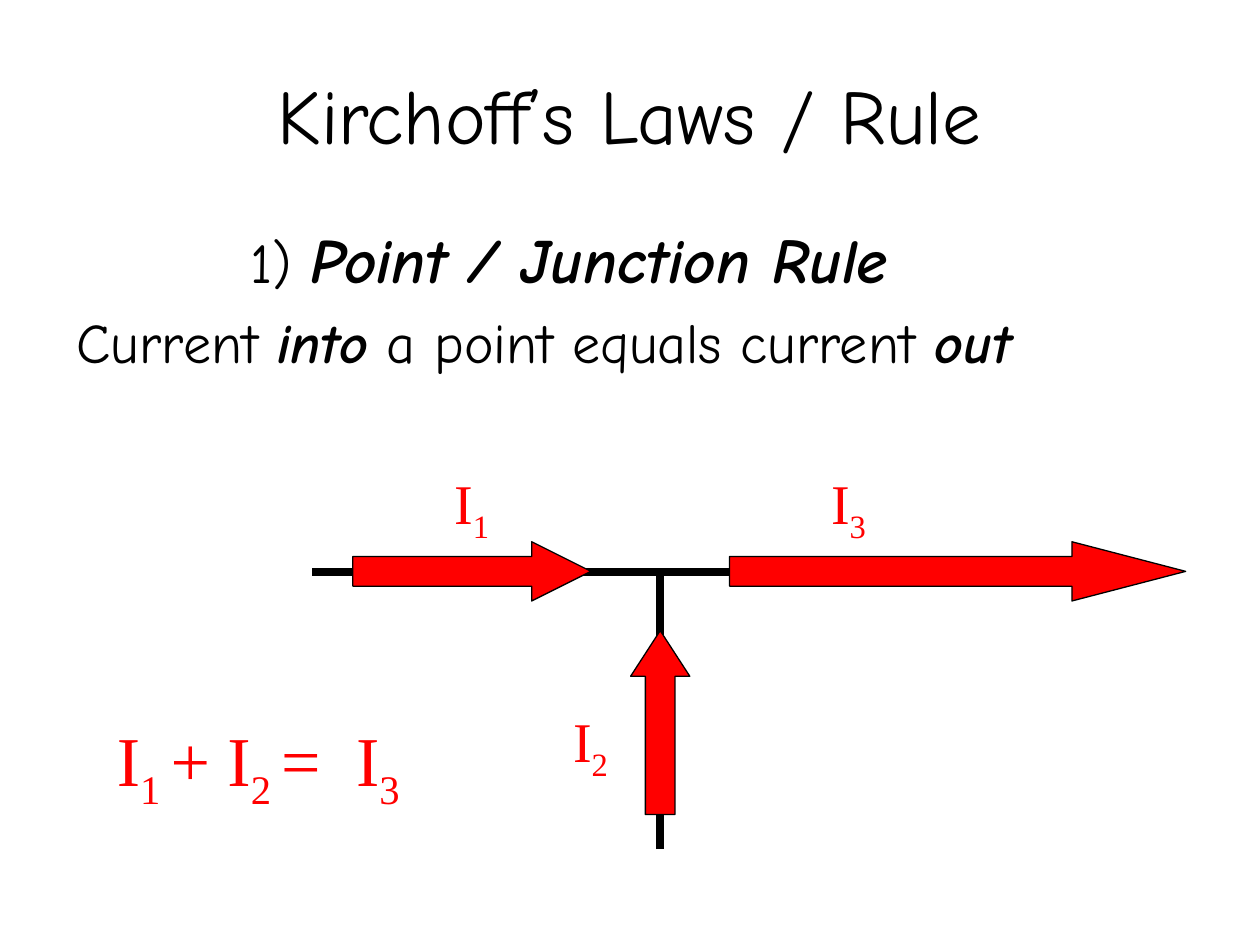
"""Build a slide on the junction rule with a diagram of three currents."""
from dataclasses import dataclass

from pptx import Presentation
from pptx.dml.color import RGBColor
from pptx.enum.shapes import MSO_CONNECTOR as Connector, MSO_SHAPE as Shape
from pptx.enum.text import MSO_ANCHOR as Anchor, PP_ALIGN as Align
from pptx.oxml.ns import qn
from pptx.slide import Slide
from pptx.text.text import TextFrame
from pptx.util import Inches, Pt
from lxml.etree import SubElement

BLACK, RED = "000000", "FF0000"
HAND, SERIF = "Comic Neue", "Times New Roman"
ARROW_HEIGHT = 0.47
WIRE_Y, JUNCTION_X = 4.54, 5.24


@dataclass
class Piece:
    text: str
    size: float = 32
    emphasis: bool = False
    subscript: bool = False


@dataclass
class Box:
    left: float
    top: float
    width: float
    height: float


@dataclass
class Style:
    font: str
    color: str
    align: Align = Align.LEFT
    space_before: float = 0
    indent: float = 0


@dataclass
class Arrow:
    left: float
    top: float
    width: float
    head: float
    rotation: float = 0


@dataclass
class Formula:
    box: Box
    size: float
    align: Align
    symbols: list[str]


def color(value: str) -> RGBColor:
    return RGBColor.from_string(value)


def add_frame(slide: Slide, box: Box, anchor: Anchor = Anchor.TOP) -> TextFrame:
    shape = slide.shapes.add_textbox(
        Inches(box.left), Inches(box.top), Inches(box.width), Inches(box.height))
    frame = shape.text_frame
    frame.word_wrap = True
    frame.vertical_anchor = anchor
    return frame


def fill_paragraph(paragraph, pieces: list[Piece], style: Style) -> None:
    paragraph.alignment = style.align
    paragraph.space_before = Pt(style.space_before)
    if style.indent:
        paragraph._p.get_or_add_pPr().set("marL", str(Inches(style.indent)))
    for piece in pieces:
        run = paragraph.add_run()
        run.text = piece.text
        run.font.name = style.font
        run.font.size = Pt(piece.size)
        run.font.bold = run.font.italic = piece.emphasis
        run.font.color.rgb = color(style.color)
        if piece.subscript:
            run._r.get_or_add_rPr().set("baseline", "-25000")


def add_wire(slide: Slide, x1: float, y1: float, x2: float, y2: float) -> None:
    wire = slide.shapes.add_connector(
        Connector.STRAIGHT, Inches(x1), Inches(y1), Inches(x2), Inches(y2))
    wire.line.color.rgb = color(BLACK)
    wire.line.width = Pt(4.5)
    SubElement(wire._element.spPr, qn("a:effectLst"))


def add_arrow(slide: Slide, arrow: Arrow) -> None:
    shape = slide.shapes.add_shape(
        Shape.RIGHT_ARROW, Inches(arrow.left), Inches(arrow.top),
        Inches(arrow.width), Inches(ARROW_HEIGHT))
    shape.adjustments[0] = 0.5
    shape.adjustments[1] = arrow.head
    shape.rotation = arrow.rotation
    shape.shadow.inherit = False
    shape.fill.solid()
    shape.fill.fore_color.rgb = color(RED)
    shape.line.color.rgb = color(BLACK)
    shape.line.width = Pt(0.75)


def add_formula(slide: Slide, formula: Formula) -> None:
    pieces = [Piece(text, formula.size, subscript=index % 2 == 1)
              for index, text in enumerate(formula.symbols)]
    frame = add_frame(slide, formula.box)
    fill_paragraph(frame.paragraphs[0], pieces, Style(SERIF, RED, formula.align))


def add_statement(slide: Slide) -> None:
    title = add_frame(slide, Box(0.75, 0.28, 8.5, 1.25), Anchor.MIDDLE)
    fill_paragraph(title.paragraphs[0], [Piece("Kirchoff’s Laws / Rule", 44)],
                   Style(HAND, BLACK, Align.CENTER))
    body = add_frame(slide, Box(0.51, 1.7, 9.06, 4.96))
    fill_paragraph(body.paragraphs[0],
                   [Piece("1) "), Piece("Point / Junction Rule", 36, True)],
                   Style(HAND, BLACK, space_before=7, indent=1.38))
    fill_paragraph(body.add_paragraph(),
                   [Piece("Current "), Piece("into", emphasis=True),
                    Piece(" a point equals current "), Piece("out", emphasis=True)],
                   Style(HAND, BLACK, space_before=6.4))


def add_diagram(slide: Slide) -> None:
    add_wire(slide, 2.48, WIRE_Y, 7.91, WIRE_Y)
    add_wire(slide, JUNCTION_X, 6.74, JUNCTION_X, WIRE_Y)
    for arrow in (Arrow(2.8, 4.3, 1.89, 1),
                  Arrow(4.51, 5.5, 1.46, 0.77, 270),
                  Arrow(5.79, 4.3, 3.62, 1.92)):
        add_arrow(slide, arrow)
    for formula in (
            Formula(Box(3.11, 3.67, 0.87, 0.63), 32, Align.RIGHT, ["I", "1"]),
            Formula(Box(4.45, 5.56, 0.87, 0.63), 32, Align.LEFT, ["I", "2"]),
            Formula(Box(6.1, 3.67, 0.87, 0.63), 32, Align.RIGHT, ["I", "3"]),
            Formula(Box(0.83, 5.64, 2.2, 0.77), 40, Align.LEFT,
                    ["I", "1 ", "+ I", "2 ", "="]),
            Formula(Box(2.4, 5.64, 0.87, 0.77), 40, Align.RIGHT, ["I", "3"])):
        add_formula(slide, formula)


def main() -> None:
    presentation = Presentation()
    presentation.slide_width, presentation.slide_height = Inches(10), Inches(7.5)
    slide = presentation.slides.add_slide(presentation.slide_layouts[6])
    add_statement(slide)
    add_diagram(slide)
    presentation.save("out.pptx")


if __name__ == "__main__":
    main()
